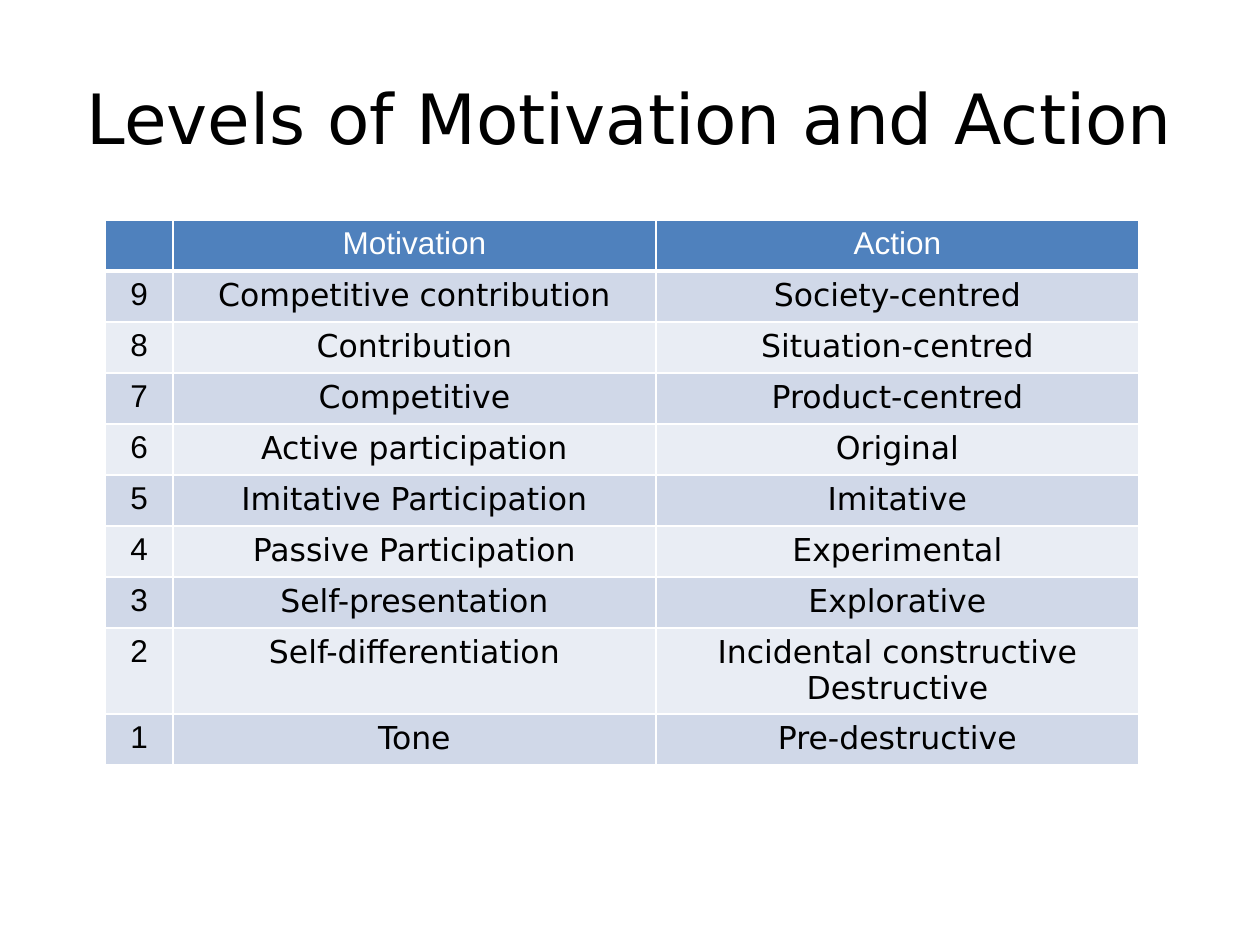
"""Build a slide with a table of the levels of motivation and action."""
from lxml import etree
from pptx import Presentation
from pptx import util as u
from pptx.dml import color
from pptx.enum import text
from pptx.oxml import ns

SCALE = 914400 / 126
SANS, ARIAL = "DejaVu Sans", "Arial"
BLACK, WHITE, HEADER = "000000", "FFFFFF", "4F81BD"
BANDS = ["D0D8E8", "E9EDF4"]


def rgb(value):
    return color.RGBColor.from_string(value)


def write(frame, wording, size, font_name, font_color):
    frame.text = wording
    for paragraph in frame.paragraphs:
        paragraph.alignment = text.PP_ALIGN.CENTER
        font_format = {"size": u.Pt(size), "name": font_name, "bold": False}
        for name, value in font_format.items():
            setattr(paragraph.font, name, value)
            for run in paragraph.runs:
                setattr(run.font, name, value)
        for run in paragraph.runs:
            run.font.color.rgb = rgb(font_color)


rows = [
    ("", "Motivation", "Action"),
    ("9", "Competitive contribution", "Society-centred"),
    ("8", "Contribution", "Situation-centred"),
    ("7", "Competitive", "Product-centred"),
    ("6", "Active participation", "Original"),
    ("5", "Imitative Participation", "Imitative"),
    ("4", "Passive Participation", "Experimental"),
    ("3", "Self-presentation", "Explorative"),
    ("2", "Self-differentiation", "Incidental constructive\nDestructive"),
    ("1", "Tone", "Pre-destructive"),
]
column_widths = [68, 483, 483]
row_heights = [86 if "\n" in row[2] else 51 for row in rows]

presentation = Presentation()
presentation.slide_width = round(1260 * SCALE)
presentation.slide_height = round(945 * SCALE)
slide = presentation.slides.add_slide(presentation.slide_layouts[6])

table_box = [105, 220, sum(column_widths), sum(row_heights)]
table = slide.shapes.add_table(
    len(rows), len(column_widths), *[round(length * SCALE) for length in table_box]
).table
for column, width in zip(table.columns, column_widths):
    column.width = round(width * SCALE)
for table_row, height in zip(table.rows, row_heights):
    table_row.height = round(height * SCALE)

for row_index, row in enumerate(rows):
    is_header = row_index == 0
    for column_index, wording in enumerate(row):
        cell = table.cell(row_index, column_index)
        font_name = ARIAL if is_header or column_index == 0 else SANS
        write(cell.text_frame, wording, 18, font_name, WHITE if is_header else BLACK)
        properties = cell._tc.get_or_add_tcPr()
        for side in ("lnL", "lnR", "lnT", "lnB"):
            points = 3 if is_header and side == "lnB" else 1
            line = etree.SubElement(properties, ns.qn(f"a:{side}"), w=str(u.Pt(points)))
            line_fill = etree.SubElement(line, ns.qn("a:solidFill"))
            etree.SubElement(line_fill, ns.qn("a:srgbClr"), val=WHITE)
        cell.fill.solid()
        cell.fill.fore_color.rgb = rgb(HEADER if is_header else BANDS[(row_index - 1) % 2])

title_box = [63, 38, 1134, 158]
title = slide.shapes.add_textbox(*[round(length * SCALE) for length in title_box])
title_format = {"word_wrap": True, "vertical_anchor": text.MSO_ANCHOR.MIDDLE}
for name, value in title_format.items():
    setattr(title.text_frame, name, value)
write(title.text_frame, "Levels of Motivation and Action", 39.6, SANS, BLACK)

presentation.save("out.pptx")
